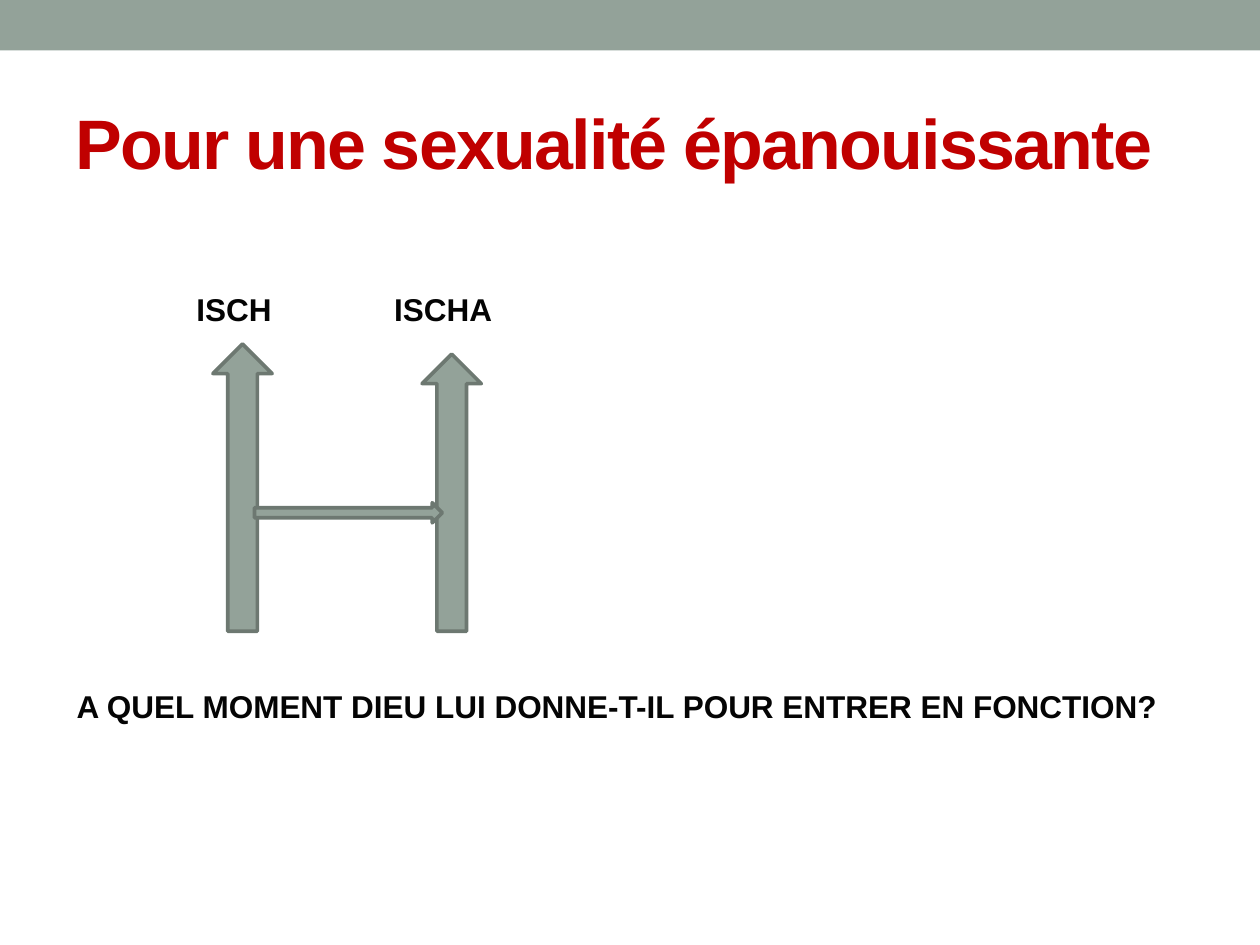
from pptx import Presentation
from pptx.dml.color import RGBColor
from pptx.enum.shapes import MSO_SHAPE
from pptx.enum.text import MSO_ANCHOR
from pptx.util import Inches, Pt

COLORS = {"sage": "93A299", "outline": "6D7871", "title": "C00000", "text": "040404"}
COLUMNS, ROWS = 100, 75
CELL = Inches(10) / COLUMNS
ARROW_BASE = 50.1
ARROW_WIDTH = 4.7


def grid(*cells):
    """Convert grid columns and rows to slide lengths."""
    return [round(cell * CELL) for cell in cells]


def add_block(slide, preset, area, outline=None, rotation=0):
    """Add a sage preset shape, outlined if a colour is given."""
    block = slide.shapes.add_shape(preset, *grid(*area))
    block.shadow.inherit = False
    block.rotation = rotation
    block.fill.solid()
    block.fill.fore_color.rgb = RGBColor.from_string(COLORS["sage"])
    if outline:
        block.line.color.rgb = RGBColor.from_string(COLORS[outline])
        block.line.width = Pt(2.08)
    else:
        block.line.fill.background()


def add_up_arrow(slide, left, top):
    """Add an arrow that rises from the common base to the given row."""
    area = (left, top, ARROW_WIDTH, ARROW_BASE - top)
    add_block(slide, MSO_SHAPE.DOWN_ARROW, area, "outline", rotation=180)


def add_label(slide, wording, area, size=18, color="text", anchor=MSO_ANCHOR.TOP):
    """Add one bold line of text and return its run."""
    frame = slide.shapes.add_textbox(*grid(*area)).text_frame
    frame.word_wrap = True
    frame.vertical_anchor = anchor
    run = frame.paragraphs[0].add_run()
    run.text = wording
    run.font.name = "Arial"
    run.font.size = Pt(size)
    run.font.bold = True
    run.font.color.rgb = RGBColor.from_string(COLORS[color])
    return run


def main():
    """Build the slide and save it."""
    deck = Presentation()
    deck.slide_width, deck.slide_height = grid(COLUMNS, ROWS)
    slide = deck.slides.add_slide(deck.slide_layouts[6])

    add_block(slide, MSO_SHAPE.RECTANGLE, (0, 0, COLUMNS, 4))
    title = add_label(slide, "Pour une sexualité épanouissante", (5, 5.8, 90, 10.8),
                      40, "title", MSO_ANCHOR.MIDDLE)
    title.font._element.set("spc", "-100")

    add_up_arrow(slide, 16.9, 27.3)
    add_up_arrow(slide, 33.5, 28.1)
    add_block(slide, MSO_SHAPE.RIGHT_ARROW, (20.2, 39.9, 14.9, 1.6), "outline")

    add_label(slide, "A QUEL MOMENT DIEU LUI DONNE-T-IL POUR ENTRER EN FONCTION?",
              (5.1, 54, 89.8, 4))
    for name, left, width in (("ISCH", 14.6, 11.8), ("ISCHA", 30.3, 10.2)):
        add_label(slide, name, (left, 22.5, width, 4))

    deck.save("out.pptx")


if __name__ == "__main__":
    main()
